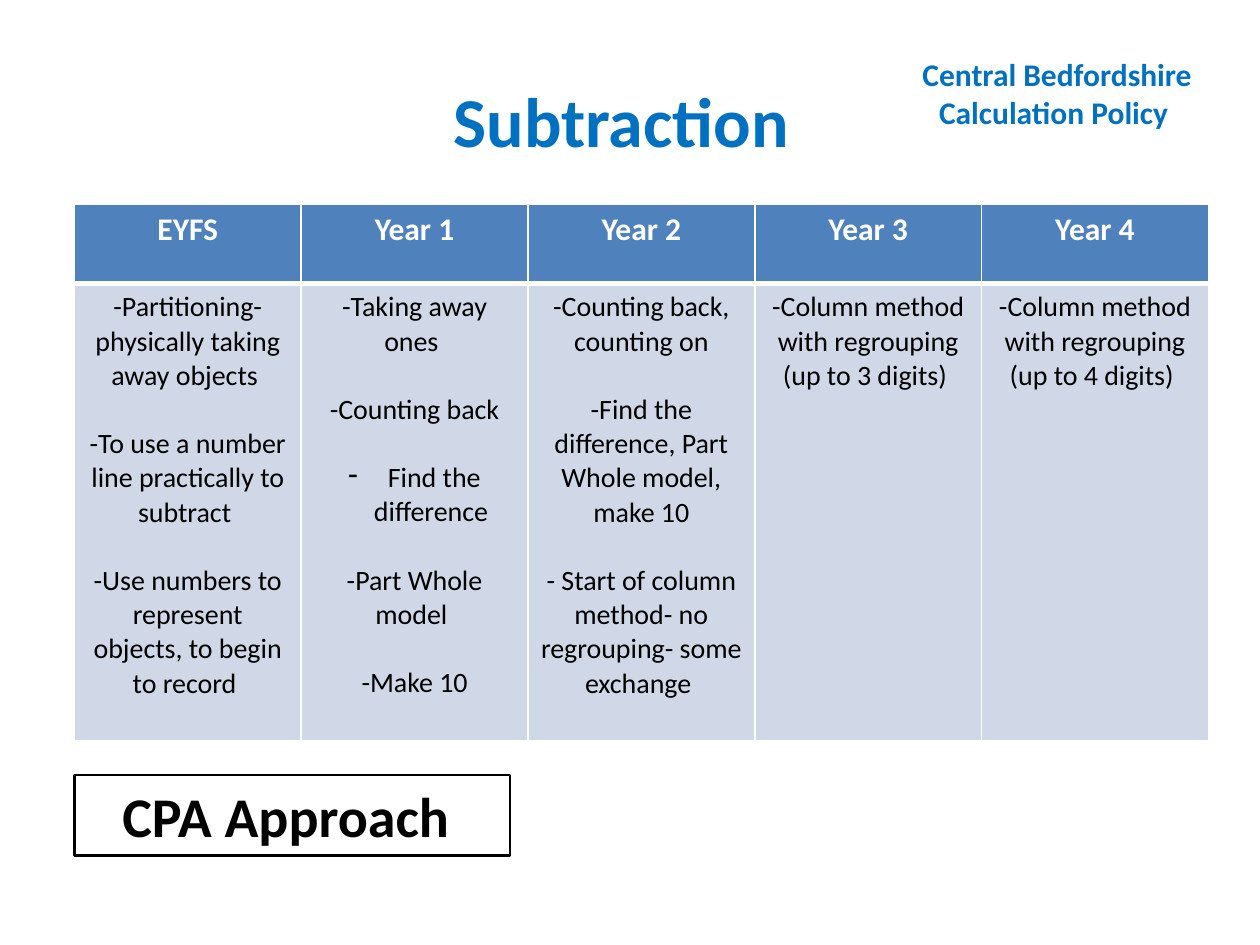
"""Build the subtraction slide of a school calculation policy."""
from lxml import etree
from pptx import Presentation
from pptx.dml.color import RGBColor
from pptx.enum.shapes import MSO_SHAPE
from pptx.enum.text import MSO_ANCHOR, PP_ALIGN
from pptx.oxml.ns import qn
from pptx.util import Pt

RECT = MSO_SHAPE.RECTANGLE
MIDDLE = MSO_ANCHOR.MIDDLE
TOP = MSO_ANCHOR.TOP
CENTER = PP_ALIGN.CENTER
BLUE = RGBColor(0x00, 0x70, 0xC0)
HEAD = RGBColor(0x4F, 0x81, 0xBD)
PALE = RGBColor(0xD0, 0xD8, 0xE8)
WHITE = RGBColor(0xFF, 0xFF, 0xFF)
BLACK = RGBColor(0x00, 0x00, 0x00)
LEFT = Pt(42.5)
GAP = Pt(19.5)
DASH = "• "


def write(frame, *lines, size, color, bold=False, anchor=TOP):
    frame.word_wrap = True
    frame.vertical_anchor = anchor
    for i, line in enumerate(lines):
        para = frame.paragraphs[0] if i == 0 else frame.add_paragraph()
        para.alignment = CENTER
        if i:
            para.space_before = GAP
        if line.startswith(DASH):
            props = para._p.get_or_add_pPr()
            props.set("marL", str(Pt(22.5)))
            props.set("indent", str(-Pt(22.5)))
            etree.SubElement(props, qn("a:buChar"), char="-")
        run = para.add_run()
        run.text = line.removeprefix(DASH)
        run.font.name = "Calibri"
        run.font.size = Pt(size)
        run.font.bold = bold
        run.font.color.rgb = color


def edge(cell, side, width):
    line = etree.SubElement(cell._tc.get_or_add_tcPr(), qn(f"a:ln{side}"), w=str(Pt(width)))
    fill = etree.SubElement(line, qn("a:solidFill"))
    etree.SubElement(fill, qn("a:srgbClr"), val=str(WHITE))


YEARS = {
    "EYFS": [
        "-Partitioning- physically taking away objects ",
        "-To use a number line practically to subtract ",
        "-Use numbers to represent objects, to begin to record ",
    ],
    "Year 1": [
        "-Taking away ones ",
        "-Counting back",
        DASH + "Find the difference ",
        "-Part Whole model ",
        "-Make 10",
    ],
    "Year 2": [
        "-Counting back, counting on",
        "-Find the difference, Part Whole model, make 10",
        "- Start of column method- no regrouping- some exchange ",
    ],
    "Year 3": ["-Column method with regrouping (up to 3 digits) "],
    "Year 4": ["-Column method with regrouping (up to 4 digits) "],
}

deck = Presentation()
deck.slide_width, deck.slide_height = Pt(720), Pt(540)
slide = deck.slides.add_slide(deck.slide_layouts[6])
shapes = slide.shapes

title = shapes.add_textbox(Pt(36), Pt(21.6), Pt(648), Pt(90)).text_frame
write(title, "Subtraction", size=40, color=BLUE, bold=True, anchor=MIDDLE)
space = title.paragraphs[0].add_run()
space.text = " "
space.font.name = "Calibri"
space.font.size = Pt(44)

table = shapes.add_table(2, len(YEARS), LEFT, Pt(116.8), Pt(648), Pt(306.5)).table
table.rows[0].height = Pt(45.4)
table.rows[1].height = Pt(261.1)
for col, (year, steps) in enumerate(YEARS.items()):
    table.columns[col].width = Pt(129.6)
    top, body = table.cell(0, col), table.cell(1, col)
    for cell, fill, edges in (
        (top, HEAD, {"L": 1, "R": 1, "T": 1, "B": 3}),
        (body, PALE, {"L": 1, "R": 1, "T": 3, "B": 1}),
    ):
        for side, width in edges.items():
            edge(cell, side, width)
        cell.fill.solid()
        cell.fill.fore_color.rgb = fill
    write(top.text_frame, year, size=18, color=WHITE, bold=True)
    write(body.text_frame, *steps, size=16, color=BLACK)

policy = shapes.add_textbox(Pt(507.6), Pt(28), Pt(193), Pt(51)).text_frame
write(policy, "Central Bedfordshire Calculation Policy ", size=18, color=BLUE, bold=True)

box = shapes.add_shape(RECT, LEFT, Pt(442.8), Pt(249), Pt(46))
box.shadow.inherit = False
box.fill.solid()
box.fill.fore_color.rgb = WHITE
tint = box._element.spPr.find(qn("a:solidFill"))[0]
etree.SubElement(tint, qn("a:alpha"), val="90000")
box.line.color.rgb = BLACK
box.line.width = Pt(1.5)
write(box.text_frame, "CPA Approach ", size=32, color=BLACK, bold=True, anchor=MIDDLE)

deck.save("out.pptx")
